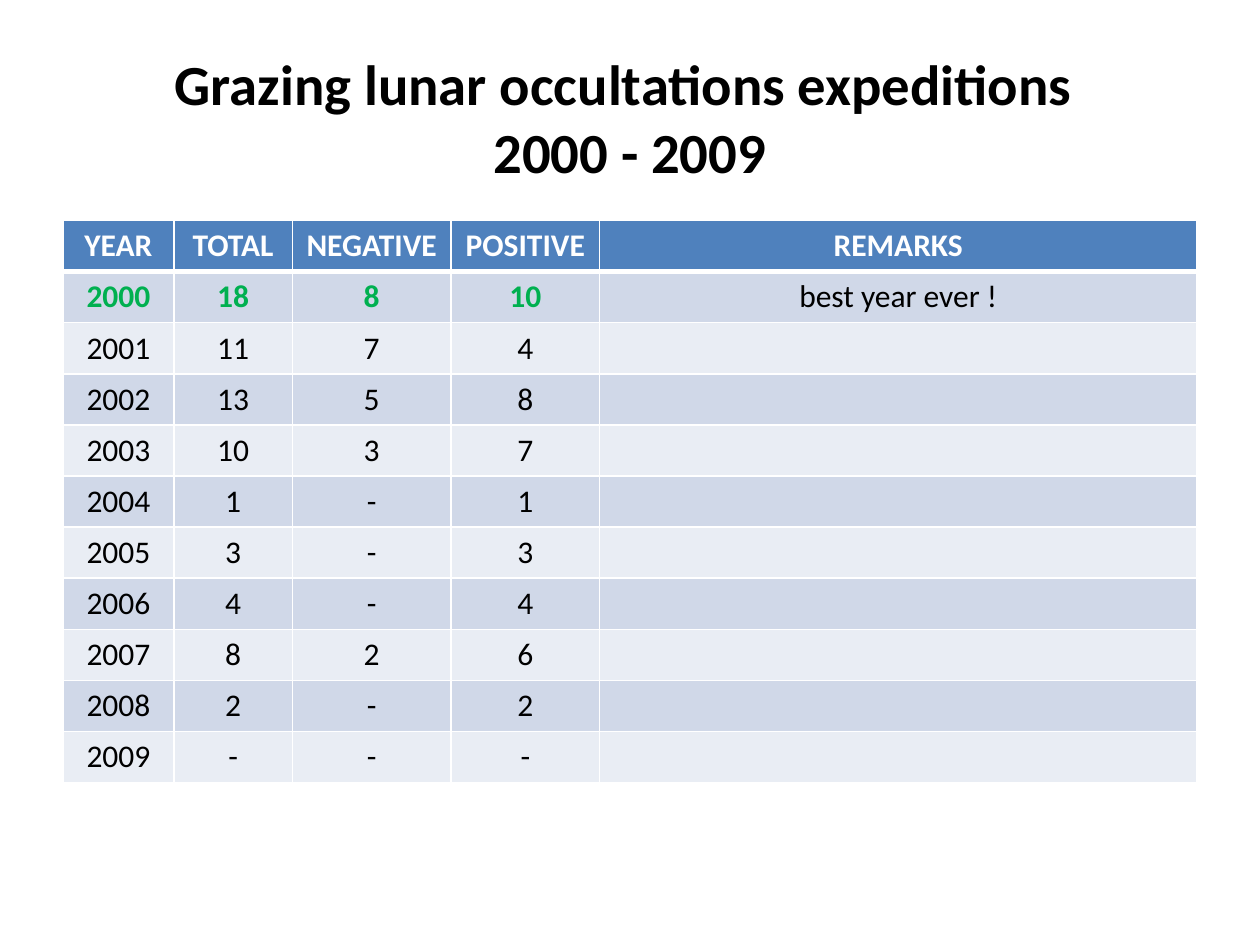
from lxml import etree
from pptx import Presentation
from pptx import util as u
from pptx.dml.color import RGBColor
from pptx.enum import text
from pptx.oxml import ns

TITLE = "Grazing lunar occultations expeditions \v2000 - 2009"
HEADERS = ("YEAR", "TOTAL", "NEGATIVE", "POSITIVE", "REMARKS")
EXPEDITIONS = [
    ("2000", "18", "8", "10", "best year ever !"),
    ("2001", "11", "7", "4", ""),
    ("2002", "13", "5", "8", ""),
    ("2003", "10", "3", "7", ""),
    ("2004", "1", "-", "1", ""),
    ("2005", "3", "-", "3", ""),
    ("2006", "4", "-", "4", ""),
    ("2007", "8", "2", "6", ""),
    ("2008", "2", "-", "2", ""),
    ("2009", "-", "-", "-", ""),
]
BEST_YEAR = "2000"

COLORS = {
    "text": "000000",
    "header_text": "FFFFFF",
    "border": "FFFFFF",
    "best": "00B050",
    "header": "4F81BD",
    "dark_band": "D0D8E8",
    "light_band": "E9EDF4",
}
FONT = "Calibri"
LEFT, WIDTH = 36, 648
TITLE_TOP, TITLE_HEIGHT = 21.6, 90
TABLE_TOP, ROW_HEIGHT = 126, 29.2
COLUMN_WIDTHS = (63.36, 67.68, 90.72, 84.96, 341.28)
HEADER_BORDERS = {"lnL": 1, "lnR": 1, "lnT": 1, "lnB": 3}


def color(name):
    return RGBColor.from_string(COLORS[name])


def write(frame, content, size, color_name, bold):
    frame.text = content
    paragraph = frame.paragraphs[0]
    paragraph.alignment = text.PP_ALIGN.CENTER
    formats = {"name": FONT, "size": u.Pt(size), "bold": bold}
    for run in paragraph.runs:
        for attribute, value in formats.items():
            setattr(run.font, attribute, value)
        run.font.color.rgb = color(color_name)


def add_borders(cell, borders):
    """Add cell borders; call before the fill, which must follow them."""
    properties = cell._tc.get_or_add_tcPr()
    for side, width in borders.items():
        line = etree.SubElement(properties, ns.qn(f"a:{side}"), w=str(u.Pt(width)))
        fill = etree.SubElement(line, ns.qn("a:solidFill"))
        etree.SubElement(fill, ns.qn("a:srgbClr"), val=COLORS["border"])


def cell_style(row, column, year):
    """Return fill name, text colour name and boldness."""
    if row == 0:
        return "header", "header_text", True
    band = "dark_band" if row % 2 else "light_band"
    if year == BEST_YEAR and HEADERS[column] != "REMARKS":
        return band, "best", True
    return band, "text", False


def add_title(slide):
    box = slide.shapes.add_textbox(
        u.Pt(LEFT), u.Pt(TITLE_TOP), u.Pt(WIDTH), u.Pt(TITLE_HEIGHT))
    box.text_frame.word_wrap = True
    box.text_frame.vertical_anchor = text.MSO_ANCHOR.MIDDLE
    write(box.text_frame, TITLE, 32.4, "text", True)


def add_expeditions_table(slide):
    rows = [HEADERS, *EXPEDITIONS]
    table = slide.shapes.add_table(
        len(rows), len(HEADERS), u.Pt(LEFT), u.Pt(TABLE_TOP),
        u.Pt(WIDTH), u.Pt(ROW_HEIGHT * len(rows))).table
    for column, width in zip(table.columns, COLUMN_WIDTHS):
        column.width = u.Pt(width)
    for r, values in enumerate(rows):
        table.rows[r].height = u.Pt(ROW_HEIGHT)
        for c, value in enumerate(values):
            fill, text_color, bold = cell_style(r, c, values[0])
            cell = table.cell(r, c)
            if r == 0:
                add_borders(cell, HEADER_BORDERS)
            cell.fill.solid()
            cell.fill.fore_color.rgb = color(fill)
            if value:
                write(cell.text_frame, value, 18, text_color, bold)


def main():
    presentation = Presentation()
    presentation.slide_width, presentation.slide_height = u.Pt(720), u.Pt(540)
    slide = presentation.slides.add_slide(presentation.slide_layouts[6])
    add_title(slide)
    add_expeditions_table(slide)
    presentation.save("out.pptx")


if __name__ == "__main__":
    main()
